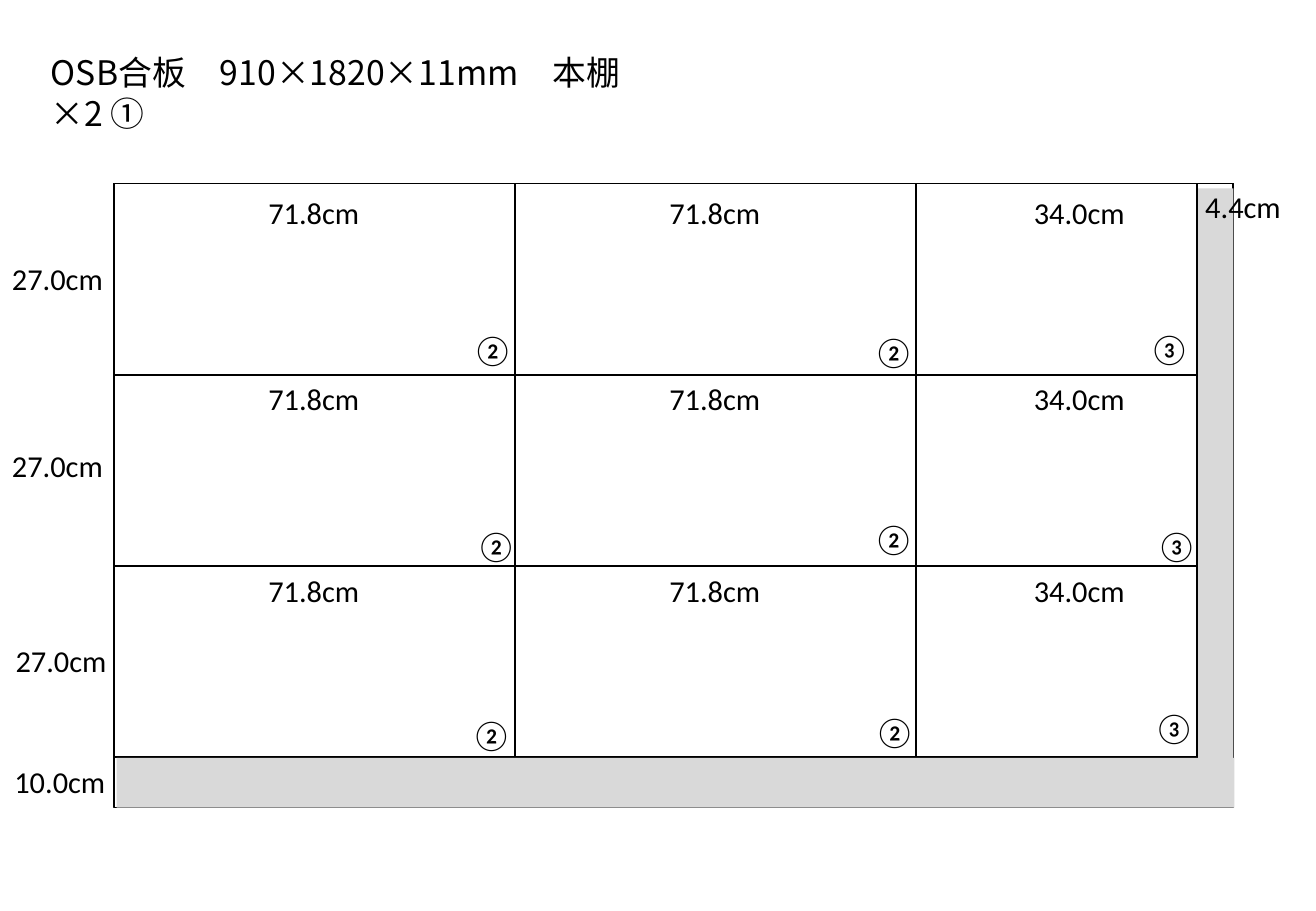
from lxml import etree
from pptx import Presentation
from pptx import util as u
from pptx.dml.color import RGBColor
from pptx.enum import shapes, text
from pptx.oxml import ns

BLACK = RGBColor(0x00, 0x00, 0x00)
OFFCUT_GREY = RGBColor(0xD9, 0xD9, 0xD9)
JAPANESE_FONT = "Noto Sans CJK JP"

presentation = Presentation()
presentation.slide_width = u.Inches(10.83)
presentation.slide_height = u.Inches(7.5)
slide = presentation.slides.add_slide(presentation.slide_layouts[6])


def add_text(words, left, top, width=0.96, height=0.4, size=18, font="Calibri", wrap=False):
    box = slide.shapes.add_textbox(*map(u.Inches, (left, top, width, height)))
    frame = box.text_frame
    frame.word_wrap = wrap
    frame.auto_size = text.MSO_AUTO_SIZE.SHAPE_TO_FIT_TEXT
    run = frame.paragraphs[0].add_run()
    run.text = words
    run.font.size = u.Pt(size)
    run.font.name = font
    run.font.color.rgb = BLACK
    east_asian = etree.SubElement(run.font._element, ns.qn("a:ea"))
    east_asian.set("typeface", JAPANESE_FONT)


def add_panel(left, top, width, height, fill=None):
    panel = slide.shapes.add_shape(
        shapes.MSO_SHAPE.RECTANGLE, *map(u.Inches, (left, top, width, height)))
    panel.shadow.inherit = False
    if fill is None:
        panel.fill.background()
        panel.line.color.rgb = BLACK
        panel.line.width = u.Pt(1)
    else:
        panel.fill.solid()
        panel.fill.fore_color.rgb = fill
        panel.line.fill.background()


board_left, board_top, board_width, board_height = 0.94, 1.51, 9.21, 5.14
row_height = 1.575
rows_height = 3 * row_height

add_panel(board_left, board_top, board_width, board_height)
add_text("OSB合板　910×1820×11mm　本棚×2 ①", 0.32, 0.38, width=5.22, height=0.44,
         size=20, font=JAPANESE_FONT, wrap=True)

for row in range(3):
    add_panel(board_left, board_top + row * row_height, board_width, row_height)

columns = [
    (3.3, "71.8cm", 2.11, "②", [(3.79, 2.68), (3.82, 4.29), (3.78, 5.85)]),
    (3.3, "71.8cm", 5.41, "②", [(7.09, 2.69), (7.09, 4.23), (7.1, 5.82)]),
    (2.31, "34.0cm", 8.41, "③", [(9.36, 2.67), (9.42, 4.29), (9.4, 5.79)]),
]
column_left = board_left
for column_width, size_label, label_left, part_number, number_places in columns:
    add_panel(column_left, board_top, column_width, rows_height)
    for label_top in (1.55, 3.08, 4.66):
        add_text(size_label, label_left, label_top)
    for number_left, number_top in number_places:
        add_text(part_number, number_left, number_top, width=0.45)
    column_left += column_width

for height_label, label_left, label_top in [
    ("27.0cm", 0, 2.09),
    ("27.0cm", 0, 3.63),
    ("27.0cm", 0.03, 5.24),
    ("10.0cm", 0.02, 6.23),
]:
    add_text(height_label, label_left, label_top)

add_panel(0.96, 6.24, 9.2, 0.41, fill=OFFCUT_GREY)
add_panel(9.86, 1.55, 0.29, 5.09, fill=OFFCUT_GREY)
add_text("4.4cm", 9.82, 1.5, width=0.83)

presentation.save("out.pptx")
